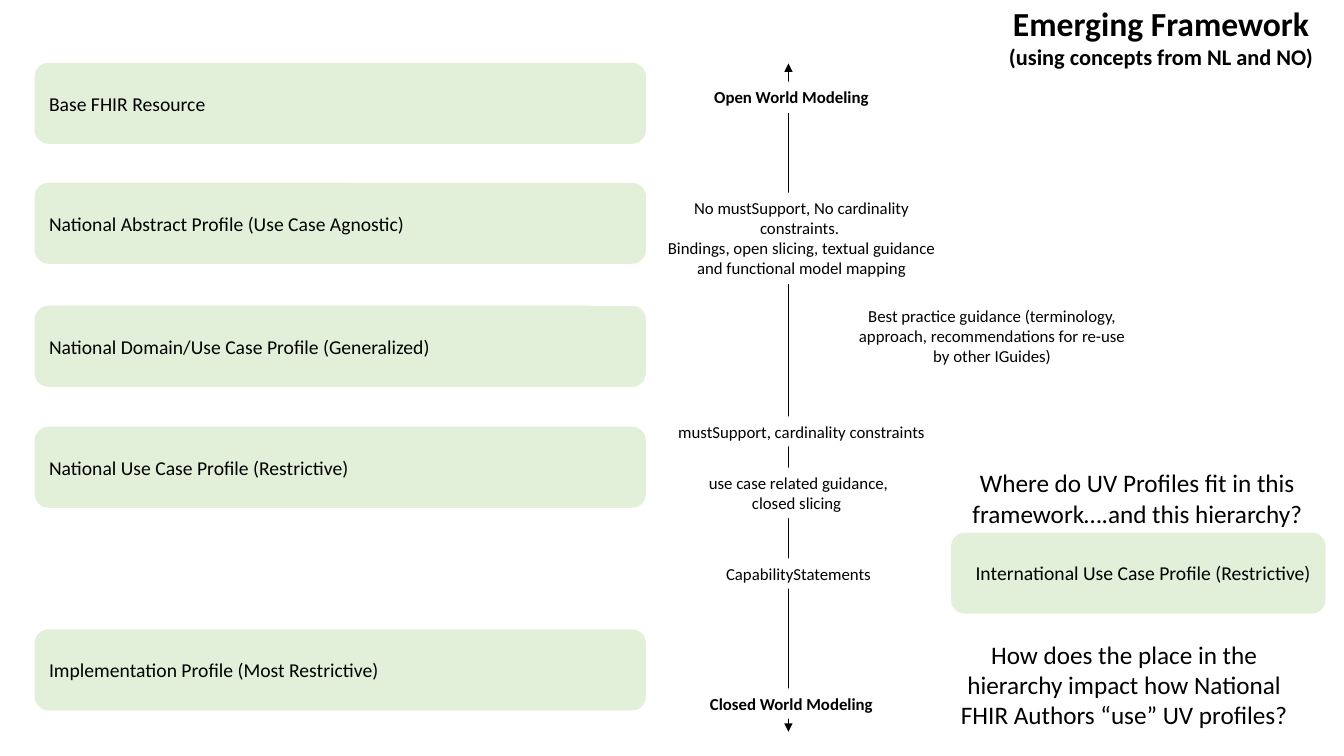
from dataclasses import dataclass

from lxml.etree import SubElement
from pptx import Presentation
from pptx.dml.color import RGBColor
from pptx.enum.shapes import MSO_CONNECTOR, MSO_SHAPE
from pptx.enum.text import MSO_ANCHOR, MSO_AUTO_SIZE, PP_ALIGN
from pptx.oxml.ns import qn
from pptx.shapes.autoshape import Shape
from pptx.slide import Slide
from pptx.util import Inches, Pt


@dataclass(frozen=True)
class Theme:
    font: str = "Calibri"
    text: RGBColor = RGBColor(0x00, 0x00, 0x00)
    paper: RGBColor = RGBColor(0xFF, 0xFF, 0xFF)
    profile: RGBColor = RGBColor(0xE2, 0xF0, 0xD9)
    title_size: int = 24
    subtitle_size: int = 16
    question_size: int = 18
    profile_size: int = 14
    label_size: int = 12


THEME = Theme()


@dataclass(frozen=True)
class Line:
    text: str
    size: int
    bold: bool = False


@dataclass(frozen=True)
class Box:
    left: float
    top: float
    width: float
    height: float


@dataclass(frozen=True)
class Profile:
    box: Box
    name: str
    alignment: PP_ALIGN = PP_ALIGN.LEFT


@dataclass(frozen=True)
class Label:
    box: Box
    texts: tuple[str, ...]
    bold: bool = False


@dataclass(frozen=True)
class Heading:
    box: Box
    lines: tuple[Line, ...]


PROFILE_LEFT, PROFILE_WIDTH, PROFILE_HEIGHT = 0.35, 6.05, 0.79
LABEL_WIDTH = 2.98
QUESTION_WIDTH = 3.7
AXIS_X, AXIS_TOP, AXIS_BOTTOM = 7.82, 0.63, 7.26

HIERARCHY = (
    (0.63, "Base FHIR Resource"),
    (1.82, "National Abstract Profile (Use Case Agnostic)"),
    (3.04, "National Domain/Use Case Profile (Generalized)"),
    (4.24, "National Use Case Profile (Restrictive)"),
    (6.25, "Implementation Profile (Most Restrictive)"),
)

PROFILES = tuple(
    Profile(Box(PROFILE_LEFT, top, PROFILE_WIDTH, PROFILE_HEIGHT), name)
    for top, name in HIERARCHY
) + (
    Profile(
        Box(9.44, 5.29, QUESTION_WIDTH, PROFILE_HEIGHT),
        "International Use Case Profile (Restrictive)",
        PP_ALIGN.RIGHT,
    ),
)

LABELS = (
    Label(
        Box(6.46, 1.91, LABEL_WIDTH, 0.91),
        (
            "No mustSupport, No cardinality constraints. ",
            "Bindings, open slicing, textual guidance and functional model mapping",
        ),
    ),
    Label(Box(6.95, 0.81, 1.8, 0.31), ("Open World Modeling",), True),
    Label(Box(6.85, 6.83, 2, 0.3), ("Closed World Modeling",), True),
    Label(
        Box(6.43, 4.64, LABEL_WIDTH, 0.5),
        ("use case related guidance,", "closed slicing "),
    ),
    Label(Box(6.43, 5.54, LABEL_WIDTH, 0.3), ("CapabilityStatements",)),
    Label(Box(6.46, 4.13, LABEL_WIDTH, 0.3), ("mustSupport, cardinality constraints",)),
    Label(
        Box(8.35, 2.98, LABEL_WIDTH, 0.71),
        (
            "Best practice guidance (terminology, approach, "
            "recommendations for re-use by other IGuides)",
        ),
    ),
)

HEADINGS = (
    Heading(
        Box(8.79, -0.02, 5.45, 0.77),
        (
            Line("Emerging Framework", THEME.title_size, True),
            Line("(using concepts from NL and NO)", THEME.subtitle_size, True),
        ),
    ),
    Heading(
        Box(9.43, 4.59, QUESTION_WIDTH, 0.71),
        (
            Line(
                "Where do UV Profiles fit in this framework….and this hierarchy?",
                THEME.question_size,
            ),
        ),
    ),
    Heading(
        Box(9.3, 6.29, QUESTION_WIDTH, 1.01),
        (
            Line(
                "How does the place in the hierarchy impact how National "
                "FHIR Authors “use” UV profiles?",
                THEME.question_size,
            ),
        ),
    ),
)


def lengths(box: Box) -> tuple[Inches, Inches, Inches, Inches]:
    return Inches(box.left), Inches(box.top), Inches(box.width), Inches(box.height)


def write(
    shape: Shape, lines: tuple[Line, ...], alignment: PP_ALIGN, anchor: MSO_ANCHOR
) -> None:
    frame = shape.text_frame
    frame.word_wrap = True
    frame.auto_size = MSO_AUTO_SIZE.NONE
    frame.vertical_anchor = anchor
    for index, line in enumerate(lines):
        paragraph = frame.add_paragraph() if index else frame.paragraphs[0]
        paragraph.alignment = alignment
        run = paragraph.add_run()
        run.text = line.text
        run.font.name = THEME.font
        run.font.size = Pt(line.size)
        run.font.bold = line.bold
        run.font.color.rgb = THEME.text


def add_filled(slide: Slide, preset: MSO_SHAPE, box: Box, color: RGBColor) -> Shape:
    shape = slide.shapes.add_shape(preset, *lengths(box))
    shape.shadow.inherit = False
    shape.fill.solid()
    shape.fill.fore_color.rgb = color
    return shape


def add_profile(slide: Slide, profile: Profile) -> None:
    shape = add_filled(slide, MSO_SHAPE.ROUNDED_RECTANGLE, profile.box, THEME.profile)
    shape.line.color.rgb = THEME.profile
    shape.line.width = Pt(1)
    line = Line(profile.name, THEME.profile_size)
    write(shape, (line,), profile.alignment, MSO_ANCHOR.MIDDLE)


def add_label(slide: Slide, label: Label) -> None:
    shape = add_filled(slide, MSO_SHAPE.RECTANGLE, label.box, THEME.paper)
    shape.line.fill.background()
    lines = tuple(Line(text, THEME.label_size, label.bold) for text in label.texts)
    write(shape, lines, PP_ALIGN.CENTER, MSO_ANCHOR.TOP)


def add_heading(slide: Slide, heading: Heading) -> None:
    shape = slide.shapes.add_textbox(*lengths(heading.box))
    write(shape, heading.lines, PP_ALIGN.CENTER, MSO_ANCHOR.TOP)


def add_axis(slide: Slide) -> None:
    axis = slide.shapes.add_connector(
        MSO_CONNECTOR.STRAIGHT,
        Inches(AXIS_X), Inches(AXIS_TOP), Inches(AXIS_X), Inches(AXIS_BOTTOM),
    )
    axis.line.color.rgb = THEME.text
    axis.line.width = Pt(0.5)
    outline = axis.line._get_or_add_ln()
    for end in ("a:headEnd", "a:tailEnd"):
        SubElement(outline, qn(end), type="triangle")
    SubElement(axis._element.spPr, qn("a:effectLst"))


def main() -> None:
    presentation = Presentation()
    presentation.slide_width = Inches(13.33)
    presentation.slide_height = Inches(7.5)
    slide = presentation.slides.add_slide(presentation.slide_layouts[6])
    for profile in PROFILES:
        add_profile(slide, profile)
    add_axis(slide)
    for label in LABELS:
        add_label(slide, label)
    for heading in HEADINGS:
        add_heading(slide, heading)
    presentation.save("out.pptx")


if __name__ == "__main__":
    main()
